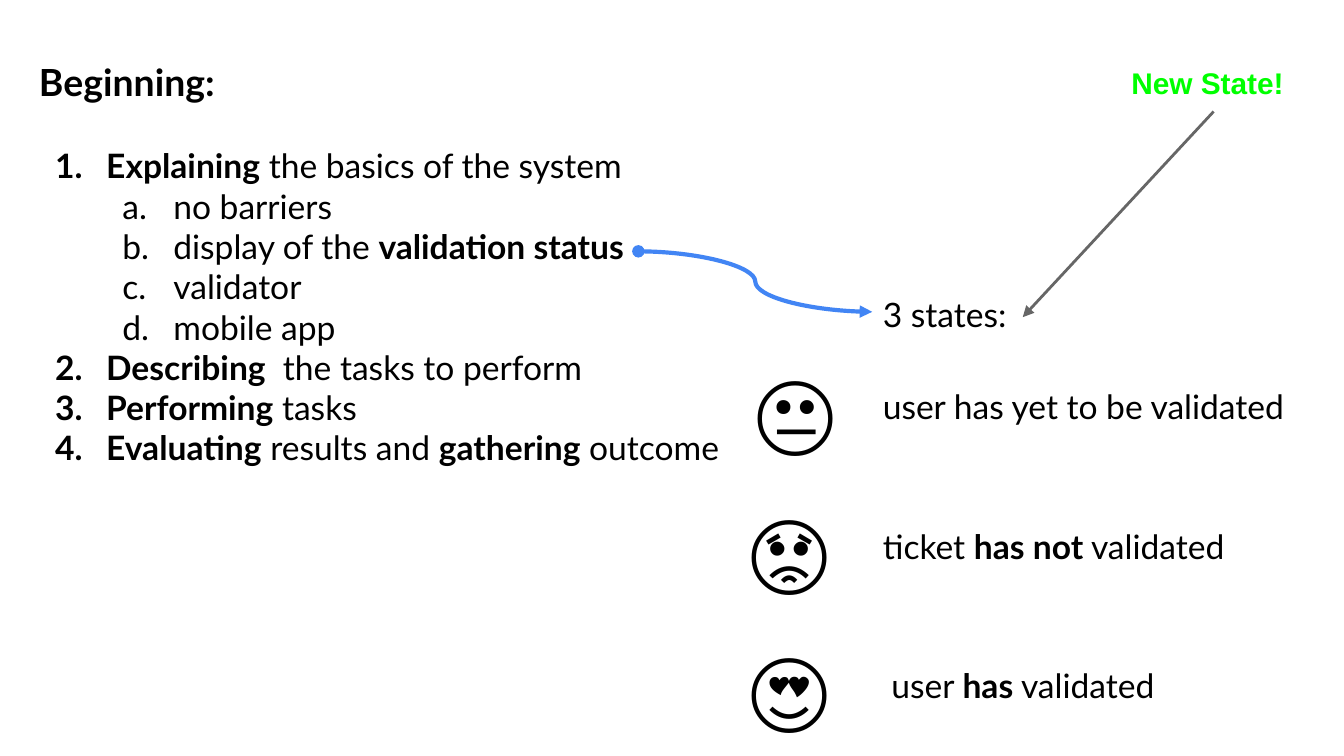
from lxml.etree import SubElement as Sub
from pptx import Presentation
from pptx.dml.color import RGBColor as RGB
from pptx.enum.shapes import MSO_CONNECTOR as Link
from pptx.enum.text import MSO_ANCHOR as Anchor, MSO_AUTO_SIZE as Fit, PP_ALIGN as Align
from pptx.oxml.ns import qn
from pptx.util import Inches, Pt

COLORS = {"text": "000000", "curve": "4285F4", "arrow": "666666", "new": "00FF00"}
STEPS = [
    (0, "*Explaining* the basics of the system"),
    (1, "no barriers"),
    (1, "display of the *validation status*"),
    (1, "validator"),
    (1, "mobile app"),
    (0, "*Describing*  the tasks to perform"),
    (0, "*Performing* tasks"),
    (0, "*Evaluating* results and *gathering* outcome"),
]
STATES = [
    (0, "3 states:"),
    (24.8, "user has yet to be validated"),
    (49.7, "ticket *has not* validated"),
    (49.7, " user *has* validated"),
]
FACES = [
    ("😐", (5.47, 2.49, 0.9, 0.98), Align.CENTER),
    ("😡", (5.47, 3.56, 1, 0.91), Align.LEFT),
    ("😍", (5.47, 4.55, 1.16, 0.98), Align.LEFT),
]


def place(shape, box, anchor=Anchor.TOP):
    shape.left, shape.top, shape.width, shape.height = map(Inches, box)
    frame = shape.text_frame
    frame.word_wrap = True
    frame.auto_size = Fit.NONE
    frame.vertical_anchor = anchor
    frame.margin_left = frame.margin_right = Inches(0.1)
    frame.margin_top = frame.margin_bottom = Inches(0.1)
    return frame


def write(para, text, size, face="Lato", color="text", align=Align.LEFT, space=1, before=0):
    para.alignment = align
    para.line_spacing = space
    para.space_before = Pt(before)
    para.space_after = Pt(0)
    font = para.font
    font.name, font.size = face, Pt(size)
    font.color.rgb = RGB.from_string(COLORS[color])
    for i, part in enumerate(text.split("*")):
        if part:
            run = para.add_run()
            run.text = part
            run.font.bold = i % 2 == 1


def line_at(frame, i):
    return frame.add_paragraph() if i else frame.paragraphs[0]


def number(para, level):
    para.level = level
    props = para._p.get_or_add_pPr()
    props.set("marL", str(Inches(0.5 * (level + 1))))
    props.set("indent", str(Inches(-0.38)))
    Sub(props, qn("a:buFont"), typeface="Lato")
    Sub(props, qn("a:buAutoNum"), type=("arabicPeriod", "alphaLcPeriod")[level])


def add_steps(slide, box):
    left, top, width, height = box
    head = 0.64
    title = place(slide.shapes.title, (left, top, width, head))
    write(title.paragraphs[0], "*Beginning:*", 20)
    body = place(slide.placeholders[1], (left, top + head, width, height - head))
    for i, (level, text) in enumerate(STEPS):
        para = line_at(body, i)
        number(para, level)
        write(para, text, 18)


def add_box(slide, box, anchor=Anchor.TOP):
    return place(slide.shapes.add_textbox(0, 0, 0, 0), box, anchor)


def add_states(slide, box):
    frame = add_box(slide, box)
    for i, (gap, text) in enumerate(STATES):
        write(line_at(frame, i), text, 18, space=1.15, before=gap)


def add_faces(slide):
    for face, box, align in FACES:
        frame = add_box(slide, box, Anchor.MIDDLE)
        write(frame.paragraphs[0], face, 48, "Arial", align=align, space=1.15)


def add_link(slide, kind, start, end, color, width, head="none"):
    link = slide.shapes.add_connector(kind, *map(Inches, start + end))
    link.line.color.rgb = RGB.from_string(COLORS[color])
    link.line.width = Pt(width)
    line = link.line._get_or_add_ln()
    Sub(line, qn("a:headEnd"), type=head)
    Sub(line, qn("a:tailEnd"), type="triangle")
    Sub(link._element.spPr, qn("a:effectLst"))


def add_note(slide, box):
    frame = add_box(slide, box)
    write(frame.paragraphs[0], "*New State!*", 16, "Arial", "new")


def main():
    deck = Presentation()
    deck.slide_width = Inches(10)
    deck.slide_height = deck.slide_width * 9 // 16
    slide = deck.slides.add_slide(deck.slide_layouts[1])
    add_steps(slide, (0.19, 0.34, 5.29, 3.86))
    add_states(slide, (6.47, 2.04, 3.55, 3.45))
    add_link(slide, Link.CURVE, (4.75, 1.87), (6.49, 2.32), "curve", 2.25, "oval")
    add_faces(slide)
    add_link(slide, Link.STRAIGHT, (9.03, 0.83), (7.61, 2.36), "arrow", 1.5)
    add_note(slide, (8.32, 0.38, 1.42, 0.45))
    deck.save("out.pptx")


if __name__ == "__main__":
    main()
